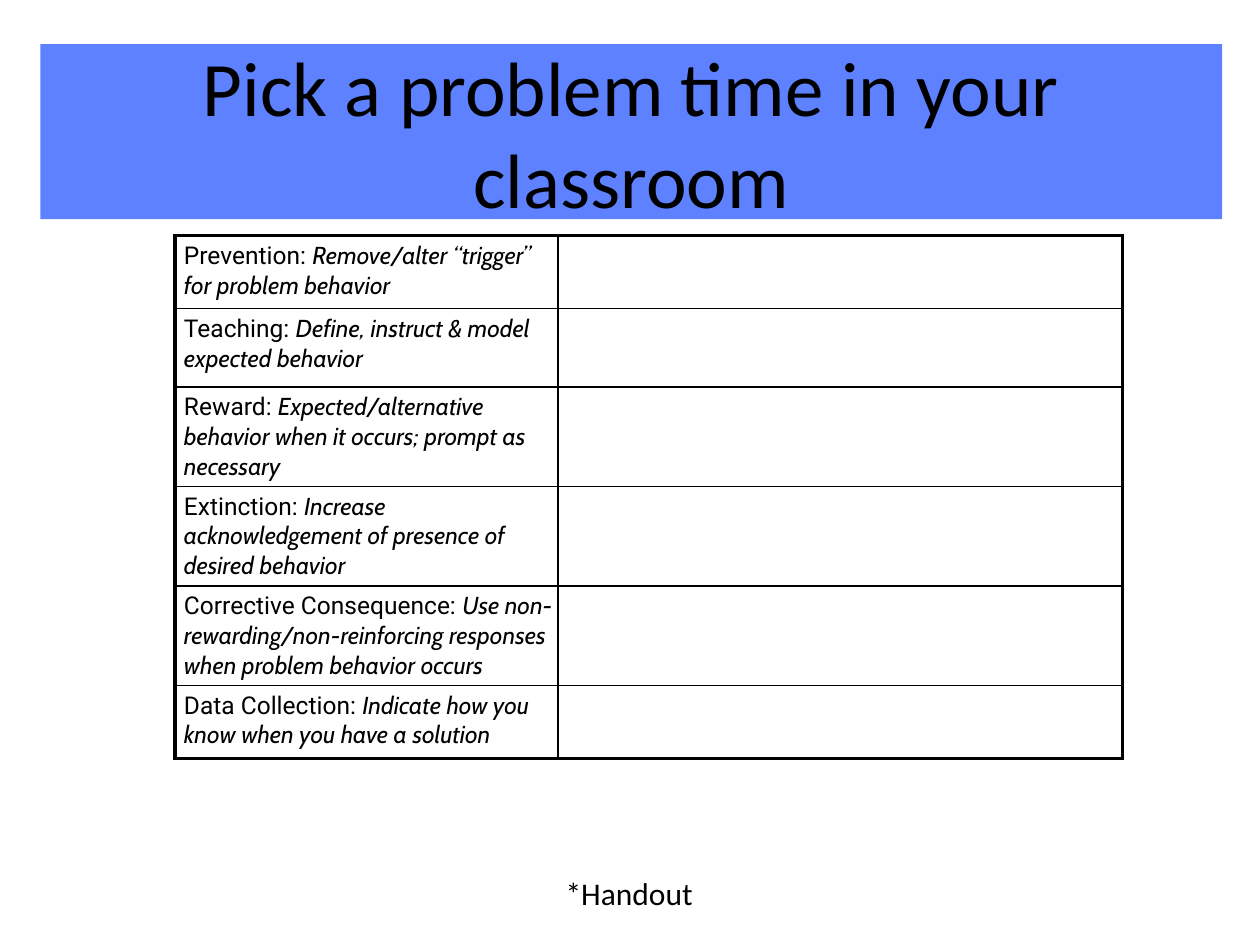
from lxml.etree import SubElement
from pptx import Presentation
from pptx.dml.color import RGBColor
from pptx.enum.shapes import MSO_SHAPE
from pptx.enum.text import MSO_ANCHOR, PP_ALIGN
from pptx.oxml.ns import qn
from pptx.util import Inches, Pt

WIDTH, HEIGHT = Inches(10), Inches(7.5)
BLACK, BLUE = "000000", "5D81FF"
THIN, THICK = 1, 2.25

STRATEGIES = [
    ("Prevention: ", "Remove/alter “trigger” for problem behavior"),
    ("Teaching: ", "Define, instruct & model expected behavior"),
    ("Reward: ", "Expected/alternative behavior when it occurs; prompt as necessary"),
    ("Extinction: ", "Increase acknowledgement of presence of desired behavior"),
    ("Corrective Consequence: ",
     "Use non-rewarding/non-reinforcing responses when problem behavior occurs"),
    ("Data Collection: ", "Indicate how you know when you have a solution"),
]
ROW_HEIGHTS = [0.58, 0.62, 0.78, 0.78, 0.78, 0.58]
COLUMN_WIDTHS = [3.04, 4.48]


def color(hex_string):
    return RGBColor.from_string(hex_string)


def write(paragraph, text, size=18, font="Calibri", ink=BLACK, italic=False, align=None):
    run = paragraph.add_run()
    run.text = text
    run.font.size, run.font.name, run.font.italic = Pt(size), font, italic
    run.font.color.rgb = color(ink)
    if align is not None:
        paragraph.alignment = align


def set_borders(cell, **widths):
    """Draw cell edges, given in points as L, R, T and B in that order."""
    properties = cell._tc.get_or_add_tcPr()
    for position, (side, width) in enumerate(widths.items()):
        line = SubElement(properties, qn(f"a:ln{side}"), w=str(Pt(width)))
        fill = SubElement(line, qn("a:solidFill"))
        SubElement(fill, qn("a:srgbClr"), val=BLACK)
        properties.insert(position, line)


class Worksheet:
    """Places elements by shares of the slide's width and height."""

    def __init__(self, slide):
        self.shapes = slide.shapes

    def box(self, left, top, width, height):
        return (round(left * WIDTH), round(top * HEIGHT),
                round(width * WIDTH), round(height * HEIGHT))

    def banner(self, text, *place):
        banner = self.shapes.add_shape(MSO_SHAPE.RECTANGLE, *self.box(*place))
        banner.shadow.inherit = False
        banner.fill.solid()
        banner.fill.fore_color.rgb = color(BLUE)
        banner.line.fill.background()
        frame = banner.text_frame
        frame.word_wrap = True
        frame.vertical_anchor = MSO_ANCHOR.MIDDLE
        write(frame.paragraphs[0], text, size=44, align=PP_ALIGN.CENTER)

    def note(self, text, *place):
        frame = self.shapes.add_textbox(*self.box(*place)).text_frame
        frame.word_wrap = True
        write(frame.paragraphs[0], text)

    def planner(self, strategies, *place):
        """Table of strategies with an empty column to fill in."""
        last = len(strategies) - 1
        table = self.shapes.add_table(len(strategies), 2, *self.box(*place)).table
        table.first_row = table.horz_banding = False
        for column, width in zip(table.columns, COLUMN_WIDTHS):
            column.width = Inches(width)
        for index, (strategy, advice) in enumerate(strategies):
            table.rows[index].height = Inches(ROW_HEIGHTS[index])
            label, answer = table.cell(index, 0), table.cell(index, 1)
            top = THICK if index == 0 else THIN
            bottom = THICK if index == last else THIN
            for cell, left, right in ((label, THICK, THIN), (answer, THIN, THICK)):
                cell.fill.background()
                set_borders(cell, L=left, R=right, T=top, B=bottom)
            label.margin_left, label.margin_right = Inches(0.07), 0
            label.margin_top = label.margin_bottom = Inches(0.04)
            paragraph = label.text_frame.paragraphs[0]
            write(paragraph, strategy, size=14, font="Roboto")
            write(paragraph, advice, size=14, font="Cabin", italic=True)


def main():
    presentation = Presentation()
    presentation.slide_width, presentation.slide_height = WIDTH, HEIGHT
    worksheet = Worksheet(presentation.slides.add_slide(presentation.slide_layouts[6]))
    worksheet.banner("Pick a problem time in your classroom",
                     0.032, 0.35 / 7.5, 0.938, 1.39 / 7.5)
    worksheet.planner(STRATEGIES, 0.139, 1.87 / 7.5, 0.752, 4.12 / 7.5)
    worksheet.note("*Handout", 0.439, 6.89 / 7.5, 0.123, 0.4 / 7.5)
    presentation.save("out.pptx")


if __name__ == "__main__":
    main()
